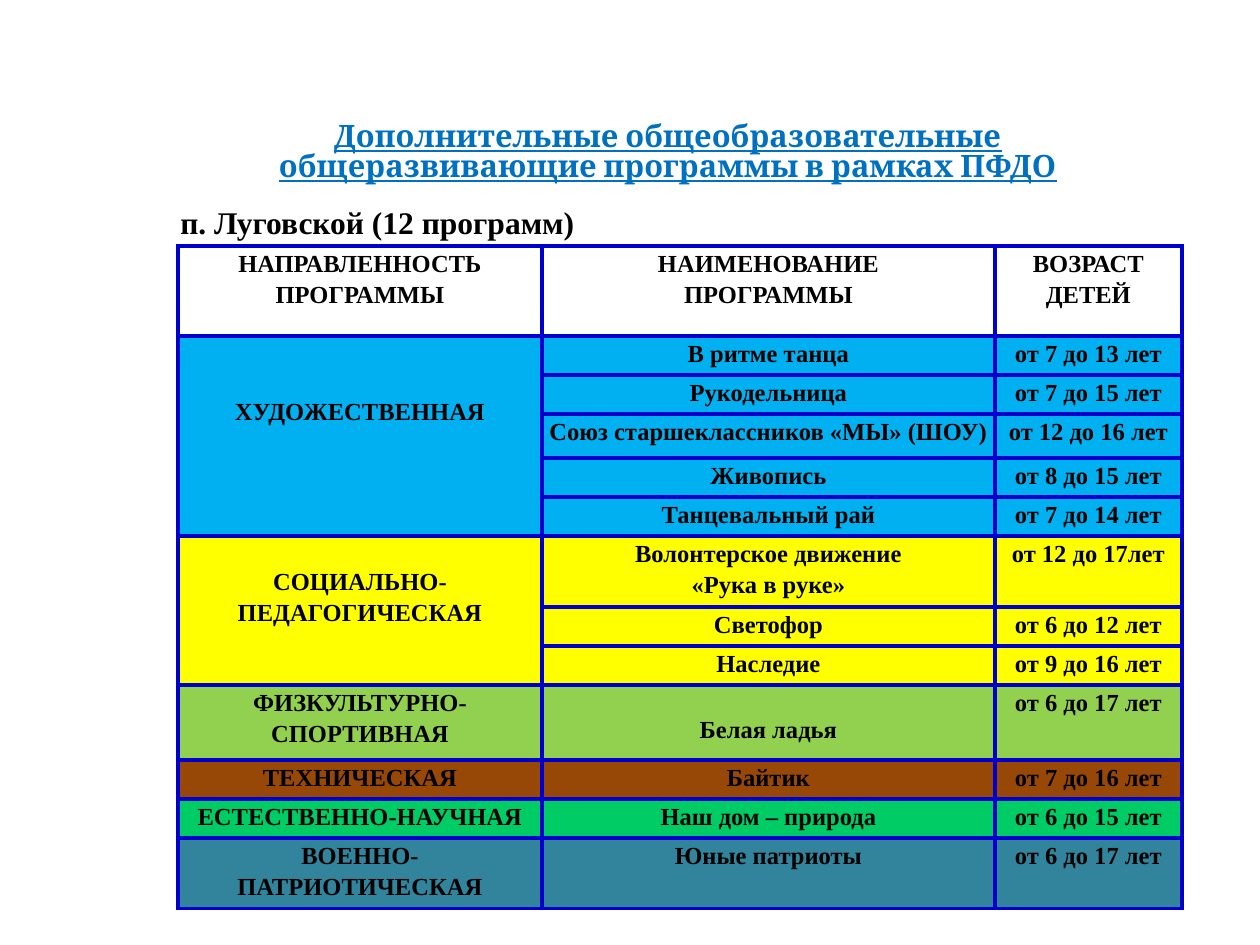
"""Build the slide listing the supplementary education programmes in Lugovskoy."""
import lxml.etree
import pptx
import pptx.dml.color
import pptx.enum.text
import pptx.oxml.ns
import pptx.util

TITLE = "Дополнительные общеобразовательные общеразвивающие программы в рамках ПФДО"
SUBTITLE = "п. Луговской (12 программ)"
HEADER = ["НАПРАВЛЕННОСТЬ\nПРОГРАММЫ", "НАИМЕНОВАНИЕ\nПРОГРАММЫ", "ВОЗРАСТ ДЕТЕЙ"]
DIRECTIONS = [
    ("ХУДОЖЕСТВЕННАЯ", "00B0F0", [
        ("В ритме танца", "от 7 до 13 лет"),
        ("Рукодельница", "от 7 до 15 лет"),
        ("Союз старшеклассников «МЫ» (ШОУ)", "от 12 до 16 лет"),
        ("Живопись", "от 8 до 15 лет"),
        ("Танцевальный рай", "от 7 до 14 лет")]),
    ("СОЦИАЛЬНО-ПЕДАГОГИЧЕСКАЯ", "FFFF00", [
        ("Волонтерское движение\n«Рука в руке»", "от 12 до 17лет"),
        ("Светофор", "от 6 до 12 лет"),
        ("Наследие", "от 9 до 16 лет")]),
    ("ФИЗКУЛЬТУРНО-СПОРТИВНАЯ", "92D050", [("Белая ладья", "от 6 до 17 лет")]),
    ("ТЕХНИЧЕСКАЯ", "984806", [("Байтик", "от 7 до 16 лет")]),
    ("ЕСТЕСТВЕННО-НАУЧНАЯ", "00CC66", [("Наш дом – природа", "от 6 до 15 лет")]),
    ("ВОЕННО-ПАТРИОТИЧЕСКАЯ", "31849B", [("Юные патриоты", "от 6 до 17 лет")]),
]
TOP_MARGINS = {"ХУДОЖЕСТВЕННАЯ": 59, "СОЦИАЛЬНО-ПЕДАГОГИЧЕСКАЯ": 29, "Белая ладья": 28}
COLUMN_WIDTHS = [364, 453, 187]
ROW_HEIGHTS = [90, 39, 39, 44, 39, 39, 71, 39, 39, 75, 39, 39, 71]
BORDER = "0000CC"
SERIF = "Times New Roman"
ALIGN = pptx.enum.text.PP_ALIGN


def px(count):
    """Turn pixels into EMU."""
    return pptx.util.Emu(round(count * 914400 / 126))


def color(value):
    """Turn a hex string into a colour."""
    return pptx.dml.color.RGBColor.from_string(value)


def write(frame, text, size, font, tint, align, spacing):
    """Fill a text frame with bold paragraphs."""
    frame.word_wrap = True
    frame.text = text
    for para in frame.paragraphs:
        para.alignment = align
        para.line_spacing = spacing
        para.space_before = pptx.util.Pt(0)
        para.font.size = pptx.util.Pt(size)
        para.font.name = font
        para.font.bold = True
        para.font.color.rgb = color(tint)


def add_borders(cell):
    """Draw a line on each side of a cell."""
    properties = cell._tc.get_or_add_tcPr()
    for side in ("a:lnL", "a:lnR", "a:lnT", "a:lnB"):
        line = lxml.etree.SubElement(properties, pptx.oxml.ns.qn(side), w=str(pptx.util.Pt(2.25)))
        fill = lxml.etree.SubElement(line, pptx.oxml.ns.qn("a:solidFill"))
        lxml.etree.SubElement(fill, pptx.oxml.ns.qn("a:srgbClr"), val=BORDER)


def fill_cell(cell, text, background):
    """Set the borders, fill, margins and text of a cell."""
    add_borders(cell)
    cell.fill.solid()
    cell.fill.fore_color.rgb = color(background)
    cell.margin_left = cell.margin_right = px(4)
    cell.margin_top = px(TOP_MARGINS.get(text, 1))
    cell.margin_bottom = px(0)
    write(cell.text_frame, text, 14, SERIF, "000000", ALIGN.CENTER, 1.15)


def add_programmes(slide):
    """Add the table of programmes, one merged cell per direction."""
    frame = slide.shapes.add_table(len(ROW_HEIGHTS), len(COLUMN_WIDTHS), px(178), px(246),
                                   px(sum(COLUMN_WIDTHS)), px(sum(ROW_HEIGHTS)))
    table = frame.table
    table.first_row = table.horz_banding = False
    for column, width in zip(table.columns, COLUMN_WIDTHS):
        column.width = px(width)
    for row, height in zip(table.rows, ROW_HEIGHTS):
        row.height = px(height)
    rows = [(HEADER, "FFFFFF")]
    for direction, background, programmes in DIRECTIONS:
        first = len(rows)
        for index, programme in enumerate(programmes):
            rows.append(([direction if index == 0 else "", *programme], background))
        if len(programmes) > 1:
            table.cell(first, 0).merge(table.cell(len(rows) - 1, 0))
    for row, (texts, background) in enumerate(rows):
        for column, text in enumerate(texts):
            fill_cell(table.cell(row, column), text, background)


def main():
    """Build and save the deck."""
    deck = pptx.Presentation()
    deck.slide_width, deck.slide_height = px(1260), px(945)
    slide = deck.slides.add_slide(deck.slide_layouts[5])

    title = slide.shapes.title
    title.left, title.top, title.width, title.height = px(227), px(118), px(882), px(98)
    write(title.text_frame, TITLE, 17.6, "Cambria", "0070C0", ALIGN.CENTER, 0.8)
    title.text_frame.vertical_anchor = pptx.enum.text.MSO_ANCHOR.TOP
    title.text_frame.auto_size = pptx.enum.text.MSO_AUTO_SIZE.NONE
    title.text_frame.paragraphs[0].font.underline = True

    subtitle = slide.shapes.add_textbox(px(168), px(197), px(443), px(50))
    write(subtitle.text_frame, SUBTITLE, 18, SERIF, "000000", ALIGN.LEFT, 1.0)

    add_programmes(slide)
    deck.save("out.pptx")


if __name__ == "__main__":
    main()
